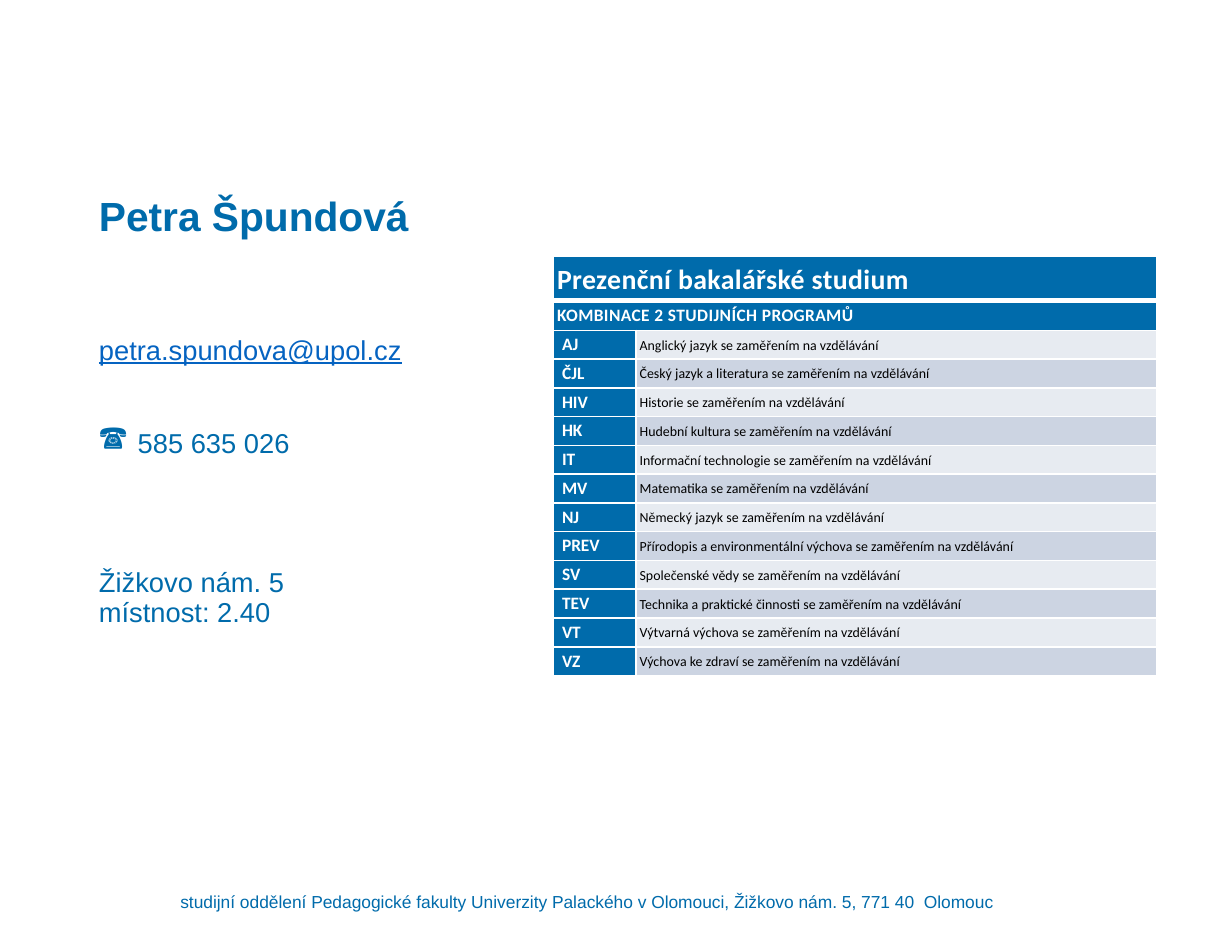
from lxml import etree
from pptx import Presentation
from pptx.dml.color import RGBColor
from pptx.enum import text
from pptx.oxml import ns
from pptx.util import Cm, Inches, Pt

BLUE = RGBColor(0x00, 0x6B, 0xAB)
LINK_BLUE = RGBColor(0x05, 0x63, 0xC1)
WHITE = RGBColor(0xFF, 0xFF, 0xFF)
BLACK = RGBColor(0x00, 0x00, 0x00)
BANDS = [RGBColor(0xE7, 0xEB, 0xF1), RGBColor(0xCC, 0xD4, 0xE2)]

HEADINGS = [("Prezenční bakalářské studium", 16, 0.35),
            ("KOMBINACE 2 STUDIJNÍCH PROGRAMŮ", 10, 0.24)]
PROGRAMMES = [
    ("AJ", "Anglický jazyk"),
    ("ČJL", "Český jazyk a literatura"),
    ("HIV", "Historie"),
    ("HK", "Hudební kultura"),
    ("IT", "Informační technologie"),
    ("MV", "Matematika"),
    ("NJ", "Německý jazyk"),
    ("PREV", "Přírodopis a environmentální výchova"),
    ("SV", "Společenské vědy"),
    ("TEV", "Technika a praktické činnosti"),
    ("VT", "Výtvarná výchova"),
    ("VZ", "Výchova ke zdraví"),
]
FOCUS = "se zaměřením na vzdělávání"
ROW_HEIGHT = 0.23
COLUMN_WIDTHS = [0.66, 4.16]


class ContactSlide:
    def __init__(self, deck):
        self.slide = deck.slides.add_slide(deck.slide_layouts[6])
        self.text_font = "Arial"
        self.table_font = "Calibri"

    def style(self, para, font, size, color, bold=False, spacing=None):
        para.font.name = font
        para.font.size = Pt(size)
        para.font.bold = bold
        para.font.color.rgb = color
        if spacing:
            para.line_spacing = spacing

    def text_box(self, left, top, width, height, lines, size, anchor,
                 bold=False, spacing=None, bottom=0):
        """Add a box; each line is (text, space before, options)."""
        box = self.slide.shapes.add_textbox(
            Inches(left), Inches(top), Inches(width), Inches(height))
        frame = box.text_frame
        frame.word_wrap = True
        frame.vertical_anchor = anchor
        frame.margin_left = frame.margin_right = frame.margin_top = 0
        frame.margin_bottom = Inches(bottom)
        for index, (words, before, options) in enumerate(lines):
            para = frame.add_paragraph() if index else frame.paragraphs[0]
            para.text = words
            if "bullet" in options:
                self.bullet(para, options["bullet"], 0.31)
            self.style(para, self.text_font, size,
                       options.get("color", BLUE), bold, spacing)
            if before:
                para.space_before = Pt(before)
            if options.get("underline"):
                para.font.underline = True
            if "align" in options:
                para.alignment = options["align"]

    def bullet(self, para, symbol, indent):
        props = para._p.get_or_add_pPr()
        props.set("marL", str(Inches(indent)))
        props.set("indent", str(-Inches(indent)))
        etree.SubElement(props, ns.qn("a:buChar")).set("char", symbol)

    def borders(self, cell, **widths):
        props = cell._tc.get_or_add_tcPr()
        for side in "LRTB":
            line = etree.SubElement(props, ns.qn("a:ln" + side))
            line.set("w", str(Pt(widths.get(side, 1))))
            fill = etree.SubElement(line, ns.qn("a:solidFill"))
            etree.SubElement(fill, ns.qn("a:srgbClr")).set("val", str(WHITE))

    def cell(self, cell, words, size, color, fill, bold=True, spacing=None,
             anchor=text.MSO_ANCHOR.MIDDLE, indent=0, tracking=0, **widths):
        self.borders(cell, **widths)
        cell.fill.solid()
        cell.fill.fore_color.rgb = fill
        cell.margin_left = cell.margin_right = Inches(0.03)
        cell.margin_top = cell.margin_bottom = Inches(0.03)
        cell.vertical_anchor = anchor
        para = cell.text_frame.paragraphs[0]
        para.text = words
        self.style(para, self.table_font, size, color, bold, spacing)
        props = para._p.get_or_add_pPr()
        if indent:
            props.set("marL", str(Inches(indent)))
        if tracking:
            props.find(ns.qn("a:defRPr")).set("spc", str(tracking))

    def programme_table(self, left, top):
        heights = [height for _, _, height in HEADINGS]
        heights += [ROW_HEIGHT] * len(PROGRAMMES)
        table = self.slide.shapes.add_table(
            len(heights), 2, Inches(left), Inches(top),
            Inches(sum(COLUMN_WIDTHS)), Inches(sum(heights))).table
        table.first_row = table.horz_banding = False
        for column, width in zip(table.columns, COLUMN_WIDTHS):
            column.width = Inches(width)
        for row, height in zip(table.rows, heights):
            row.height = Inches(height)

        for index, (words, size, _) in enumerate(HEADINGS):
            table.cell(index, 0).merge(table.cell(index, 1))
            thick = {"T": 3} if index else {"B": 3}
            for column, content in enumerate([words, ""]):
                self.cell(table.cell(index, column), content, size, WHITE,
                          BLUE, spacing=1.07, tracking=25,
                          anchor=text.MSO_ANCHOR.TOP, **thick)

        for index, (code, name) in enumerate(PROGRAMMES):
            row = index + len(HEADINGS)
            self.cell(table.cell(row, 0), code, 10, WHITE, BLUE, indent=0.04)
            self.cell(table.cell(row, 1), f"{name} {FOCUS}", 8, BLACK,
                      BANDS[index % 2], bold=False, spacing=1.07)


def main():
    deck = Presentation()
    deck.slide_width = Cm(25)
    deck.slide_height = Cm(19)
    page = ContactSlide(deck)
    top, bottom = text.MSO_ANCHOR.TOP, text.MSO_ANCHOR.BOTTOM

    page.text_box(0.79, 1.49, 3.29, 0.82, [("Petra Špundová", 0, {})],
                  23.4, bottom, bold=True, bottom=0.4)
    page.programme_table(4.42, 2.05)
    page.text_box(0.79, 2.69, 3.29, 4.27, [
        ("petra.spundova@upol.cz", 0, {"color": LINK_BLUE, "underline": True}),
        ("585 635 026", 36.5, {"bullet": "☎"}),
        ("Žižkovo nám. 5\vmístnost: 2.40", 63.5, {}),
    ], 15.7, top, spacing=0.9)
    page.text_box(0.79, 7.05, 7.79, 0.24, [
        ("studijní oddělení Pedagogické fakulty Univerzity Palackého "
         "v Olomouci, Žižkovo nám. 5, 771 40  Olomouc", 0,
         {"align": text.PP_ALIGN.CENTER}),
    ], 10, bottom)
    deck.save("out.pptx")


if __name__ == "__main__":
    main()
